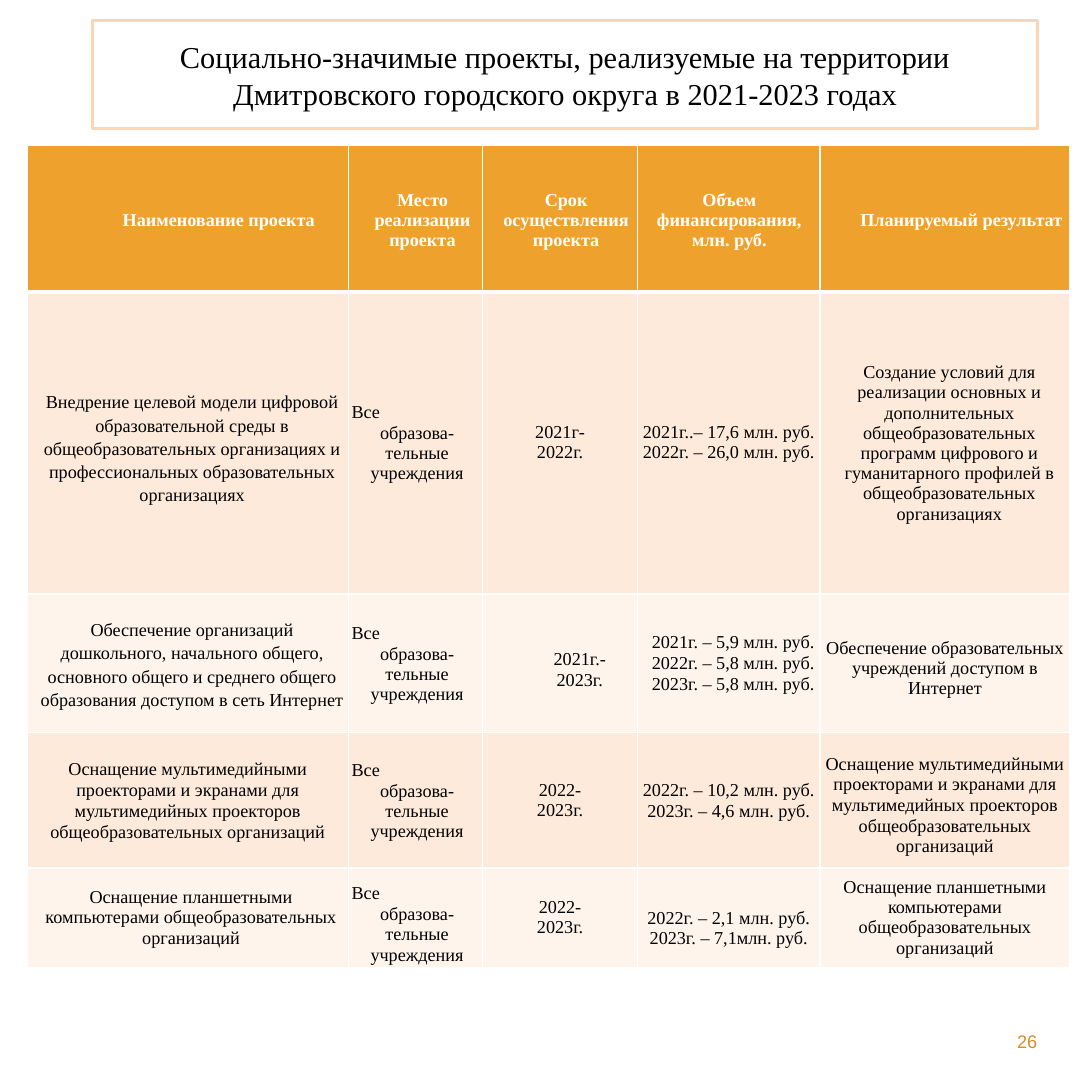
from dataclasses import dataclass

from lxml.etree import SubElement
from pptx import Presentation
from pptx.dml.color import RGBColor
from pptx.enum.text import MSO_ANCHOR, MSO_AUTO_SIZE, PP_ALIGN
from pptx.oxml.ns import qn
from pptx.util import Inches, Pt

COLORS = {
    "white": "FFFFFF", "black": "000000", "header": "EFA12D",
    "odd_row": "FDEADA", "even_row": "FEF4EC",
    "title_frame": "FCD5B5", "page_number": "D28E27",
}
SERIF = "Times New Roman"
COLUMN_WIDTHS = (2.94, 1.23, 1.42, 1.67, 2.29)
ROW_HEIGHTS = (1.34, 2.77, 1.27, 1.24, 0.91)


@dataclass
class Entry:
    text: str
    indent: float = 0
    top: float = 0
    before: float = 0
    spacing: float = 1
    first_align: PP_ALIGN = PP_ALIGN.CENTER


def heading(text, indent):
    return Entry(text, indent, top=0.04, before=3.2)


def all_schools(top=0.01):
    return Entry("Все\nобразова-тельные учреждения", 0.03, top, 0.5,
                 first_align=PP_ALIGN.LEFT)


PROJECTS = [
    [
        heading("Наименование проекта", 0.57),
        heading("Место реализации проекта", 0.13),
        heading("Срок осуществления проекта", 0.11),
        Entry("Объем\nфинансирования,\nмлн. руб.", 0.01, 0.04),
        heading("Планируемый результат", 0.3),
    ],
    [
        Entry("Внедрение целевой модели цифровой образовательной среды в "
              "общеобразовательных организациях и профессиональных "
              "образовательных организациях", 0.08, 0.09, 6.6, 1.15),
        all_schools(0),
        Entry("2021г-\n2022г."),
        Entry("2021г..– 17,6 млн. руб.\n2022г. – 26,0 млн. руб."),
        Entry("Создание условий для реализации основных и дополнительных "
              "общеобразовательных программ цифрового и гуманитарного "
              "профилей в общеобразовательных организациях", 0.08, 0.01, 0.5),
    ],
    [
        Entry("Обеспечение организаций\nдошкольного, начального общего, "
              "основного общего и среднего общего образования доступом в "
              "сеть Интернет", 0.08, 0.01, 0, 1.15),
        all_schools(),
        Entry("2021г.-\n2023г.", 0.36, 0.12),
        Entry("2021г. – 5,9 млн. руб.\n2022г. – 5,8 млн. руб.\n"
              "2023г. – 5,8 млн. руб.", 0.08, 0.01, 0.5),
        Entry("Обеспечение образовательных учреждений доступом в Интернет",
              top=0.09),
    ],
    [
        Entry("Оснащение мультимедийными\nпроекторами и экранами для\n"
              "мультимедийных проекторов\nобщеобразовательных организаций",
              top=0.01, before=0.4),
        all_schools(),
        Entry("2022-\n2023г."),
        Entry("2022г. – 10,2 млн. руб.\n2023г. – 4,6 млн. руб.",
              top=0.01, before=0.4),
        Entry("Оснащение мультимедийными\nпроекторами и экранами для\n"
              "мультимедийных проекторов\nобщеобразовательных организаций",
              top=0.09, before=0.4),
    ],
    [
        Entry("Оснащение планшетными\nкомпьютерами общеобразовательных\n"
              "организаций", 0.06),
        all_schools(0.12),
        Entry("2022-\n2023г."),
        Entry("2022г. – 2,1 млн. руб.\n2023г. – 7,1млн. руб.", top=0.2),
        Entry("Оснащение планшетными компьютерами\n"
              "общеобразовательных организаций"),
    ],
]


def rgb(name):
    return RGBColor.from_string(COLORS[name])


def place(shape, left, top, width, height):
    shape.left, shape.top = Inches(left), Inches(top)
    shape.width, shape.height = Inches(width), Inches(height)


def format_runs(paragraph, size, color, font=SERIF, bold=False):
    for run in paragraph.runs:
        run.font.size = Pt(size)
        run.font.name = font
        run.font.bold = bold
        run.font.color.rgb = rgb(color)


def add_borders(cell, top, bottom):
    properties = cell._tc.get_or_add_tcPr()
    for side, width in (("L", 1), ("R", 1), ("T", top), ("B", bottom)):
        border = SubElement(properties, qn(f"a:ln{side}"), w=str(Pt(width)))
        fill = SubElement(border, qn("a:solidFill"))
        SubElement(fill, qn("a:srgbClr"), val=COLORS["white"])


def fill_cell(cell, entry, row):
    add_borders(cell, top=3 if row == 1 else 1, bottom=3 if row == 0 else 1)
    cell.fill.solid()
    band = "odd_row" if row % 2 else "even_row"
    cell.fill.fore_color.rgb = rgb(band if row else "header")
    cell.vertical_anchor = MSO_ANCHOR.MIDDLE
    cell.margin_left = cell.margin_right = cell.margin_bottom = 0
    cell.margin_top = Inches(entry.top)
    cell.text_frame.text = entry.text
    for index, paragraph in enumerate(cell.text_frame.paragraphs):
        paragraph.alignment = PP_ALIGN.CENTER if index else entry.first_align
        paragraph.space_before = Pt(entry.before)
        paragraph.line_spacing = entry.spacing
        paragraph._p.get_or_add_pPr().set("marL", str(Inches(entry.indent)))
        format_runs(paragraph, 12, "black" if row else "white", bold=row == 0)


def add_projects(slide):
    projects = slide.shapes.add_table(
        len(ROW_HEIGHTS), len(COLUMN_WIDTHS), Inches(0.25), Inches(1.33),
        Inches(sum(COLUMN_WIDTHS)), Inches(sum(ROW_HEIGHTS))).table
    projects.first_row = projects.horz_banding = False
    for column, width in zip(projects.columns, COLUMN_WIDTHS):
        column.width = Inches(width)
    for row, height in enumerate(ROW_HEIGHTS):
        projects.rows[row].height = Inches(height)
        for column, entry in enumerate(PROJECTS[row]):
            fill_cell(projects.cell(row, column), entry, row)


def add_page_number(slide):
    page_number = slide.shapes.add_textbox(
        Inches(7.17), Inches(9.27), Inches(2.33), Inches(0.53))
    frame = page_number.text_frame
    frame.word_wrap = True
    frame.vertical_anchor = MSO_ANCHOR.MIDDLE
    frame.margin_left = frame.margin_right = 0
    frame.margin_top = frame.margin_bottom = 0
    frame.text = "26"
    frame.paragraphs[0].alignment = PP_ALIGN.RIGHT
    format_runs(frame.paragraphs[0], 12, "page_number", "Arial")


def set_title(slide):
    title = slide.shapes.title
    place(title, 0.85, 0.19, 8.65, 0.99)
    title.fill.solid()
    title.fill.fore_color.rgb = rgb("white")
    title.line.color.rgb = rgb("title_frame")
    title.line.width = Pt(2)
    frame = title.text_frame
    frame.auto_size = MSO_AUTO_SIZE.NONE
    frame.vertical_anchor = MSO_ANCHOR.MIDDLE
    frame.text = ("Социально-значимые проекты, реализуемые на территории\n"
                  "Дмитровского городского округа в 2021-2023 годах")
    for paragraph in frame.paragraphs:
        paragraph.alignment = PP_ALIGN.CENTER
        format_runs(paragraph, 20, "black")


def main():
    presentation = Presentation()
    presentation.slide_width = presentation.slide_height = Inches(10)
    slide = presentation.slides.add_slide(presentation.slide_layouts[5])

    # Heading
    set_title(slide)
    # Projects with their places, terms, funding and results
    add_projects(slide)
    # Page number
    add_page_number(slide)

    presentation.save("out.pptx")


if __name__ == "__main__":
    main()
